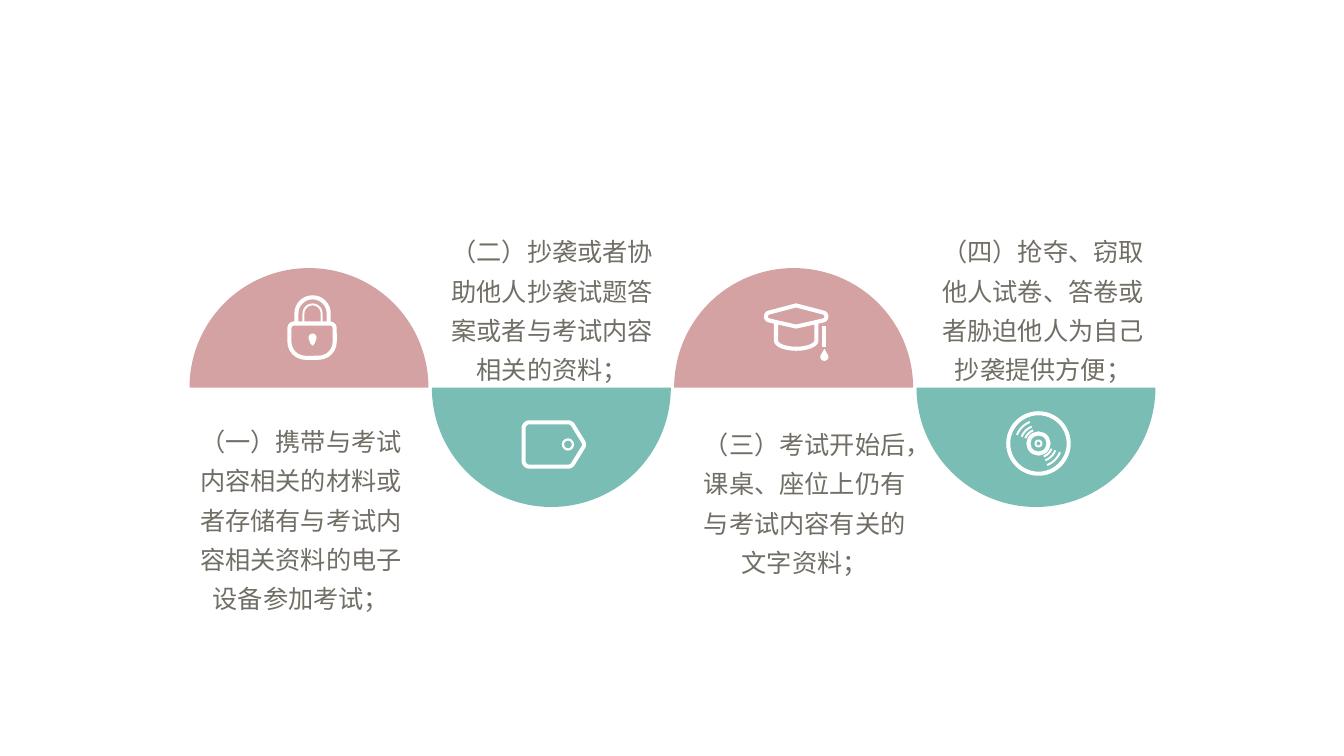
from math import cos, radians, sin

from lxml import etree
from pptx import Presentation
from pptx.dml.color import RGBColor
from pptx.enum.shapes import MSO_CONNECTOR, MSO_SHAPE
from pptx.enum.text import MSO_AUTO_SIZE, PP_ALIGN
from pptx.oxml.ns import qn
from pptx.util import Inches, Pt

ARC, OVAL = MSO_SHAPE.ARC, MSO_SHAPE.OVAL
ROUND_BODY = MSO_SHAPE.ROUND_2_SAME_RECTANGLE
STRAIGHT = MSO_CONNECTOR.STRAIGHT
CENTER, FIT_TEXT = PP_ALIGN.CENTER, MSO_AUTO_SIZE.SHAPE_TO_FIT_TEXT

PINK = RGBColor(0xD5, 0xA2, 0xA4)
TEAL = RGBColor(0x79, 0xBD, 0xB4)
GREY = RGBColor(0x70, 0x6E, 0x65)
WHITE = RGBColor(0xFF, 0xFF, 0xFF)
FONT = "Noto Sans CJK SC"
HALF_TURN = 108  # 180 degrees in the arc's adjustment units
THICK, THIN = 2.9, 1.4
DIAMETER = 2.37
ROW_LEFT, ROW_TOP, PITCH = 1.88, 2.66, 7.21 / 3


def paint(sp, fill=None, line=None):
    """Fill with a colour, or outline in white with a width in points."""
    sp.shadow.inherit = False
    if fill is None:
        sp.fill.background()
    else:
        sp.fill.solid()
        sp.fill.fore_color.rgb = fill
    if line is None:
        sp.line.fill.background()
    else:
        sp.line.color.rgb = WHITE
        sp.line.width = Pt(line)


def add_preset(s, kind, x, y, w, h, fill=None, line=None):
    sp = s.shapes.add_shape(kind, Inches(x), Inches(y), Inches(w), Inches(h))
    paint(sp, fill, line)
    return sp


def add_circle(s, cx, cy, r, line):
    add_preset(s, OVAL, cx - r, cy - r, 2 * r, 2 * r, line=line)


def add_path(s, x, y, points, closed=False, fill=None, line=None):
    """Draw points given in inches from the corner (x, y)."""
    pts = [(Inches(x + px), Inches(y + py)) for px, py in points]
    builder = s.shapes.build_freeform(*pts[0], scale=1)
    builder.add_line_segments(pts[1:], close=closed)
    paint(builder.convert_to_shape(), fill, line)


def curve(cx, cy, rx, ry, start, end, steps=16):
    """Points on an ellipse; angles in degrees, clockwise from the right."""
    angles = [radians(start + (end - start) * i / steps) for i in range(steps + 1)]
    return [(cx + rx * cos(a), cy + ry * sin(a)) for a in angles]


def draw_lock(s, x, y):
    body = add_preset(s, ROUND_BODY, x + 0.02, y + 0.28, 0.45, 0.34, line=THICK)
    body.adjustments[0], body.adjustments[1] = 0.13, 0.47
    for r, width in ((0.16, THICK), (0.09, THIN)):
        arch = curve(0.25, 0.18, r, r, 180, 360)
        add_path(s, x, y, [(0.25 - r, 0.28), *arch, (0.25 + r, 0.28)], line=width)
    keyhole = curve(0.25, 0.42, 0.04, 0.04, 170, 370)
    add_path(s, x, y, [*keyhole, (0.27, 0.48), (0.25, 0.5), (0.23, 0.48)],
             closed=True, fill=WHITE)


def draw_tag(s, x, y):
    corners = ((0.08, 0.08, 0.06, 180, 270), (0.46, 0.08, 0.06, 270, 328),
               (0.57, 0.24, 0.05, -32, 32), (0.46, 0.4, 0.06, 32, 90),
               (0.08, 0.4, 0.06, 90, 180))
    outline = [p for cx, cy, r, start, end in corners
               for p in curve(cx, cy, r, r, start, end)]
    add_path(s, x, y, outline, closed=True, line=THICK)
    add_circle(s, x + 0.46, y + 0.24, 0.05, 1.6)


def draw_cap(s, x, y):
    board = [(0.32, 0.02), *curve(0.58, 0.13, 0.04, 0.04, -77, 77),
             (0.32, 0.23), *curve(0.06, 0.13, 0.04, 0.04, 103, 257)]
    add_path(s, x, y, board, closed=True, line=THICK)
    cup = [(0.12, 0.18), *curve(0.32, 0.37, 0.2, 0.08, 180, 0), (0.52, 0.18)]
    add_path(s, x, y, cup, line=THICK)
    cord = s.shapes.add_connector(STRAIGHT, Inches(x + 0.6), Inches(y + 0.22),
                                  Inches(x + 0.6), Inches(y + 0.43))
    cord.line.color.rgb = WHITE
    cord.line.width = Pt(THICK)
    etree.SubElement(cord._element.spPr, qn("a:effectLst"))
    drop = [(0.6, 0.45), *curve(0.6, 0.53, 0.04, 0.04, -20, 200)]
    add_path(s, x, y, drop, closed=True, fill=WHITE)


def draw_disc(s, x, y):
    mid = 0.32
    for r, width in ((0.3, THICK), (0.1, THICK), (0.03, THIN)):
        add_circle(s, x + mid, y + mid, r, width)
    for r in (0.14, 0.18, 0.23):
        for start in (22, 202):
            add_path(s, x, y, curve(mid, mid, r, r, start, start + 46), line=THIN)


def add_caption(s, x, y, w, h, text):
    box = s.shapes.add_textbox(Inches(x), Inches(y), Inches(w), Inches(h))
    tf = box.text_frame
    tf.word_wrap = True
    tf.auto_size = FIT_TEXT
    p = tf.paragraphs[0]
    p.alignment, p.line_spacing = CENTER, 1.3
    r = p.add_run()
    r.text = text
    for name, value in {"size": Pt(18), "name": FONT}.items():
        setattr(r.font, name, value)
    r.font.color.rgb = GREY
    etree.SubElement(r._r.get_or_add_rPr(), qn("a:ea")).set("typeface", FONT)


def add_step(s, x, y, upper, caption_box, text, draw_icon, icon_at):
    """Half disc with icon and caption; offsets count from (x, y)."""
    half = add_preset(s, ARC, x, y, DIAMETER, DIAMETER, fill=PINK if upper else TEAL)
    half.adjustments[0] = HALF_TURN if upper else 0
    half.adjustments[1] = 0 if upper else HALF_TURN
    dx, dy, w, h = caption_box
    add_caption(s, x + dx, y + dy, w, h, text)
    draw_icon(s, x + icon_at[0], y + icon_at[1])


STEPS = [
    ((-0.01, 1.43, 2.23, 2.07),
     "（一）携带与考试内容相关的材料或者存储有与考试内容相关资料的电子设备参加考试；",
     draw_lock, (0.97, 0.27)),
    ((0.07, -0.45, 2.25, 1.68),
     "（二）抄袭或者协助他人抄袭试题答案或者与考试内容相关的资料；",
     draw_tag, (0.89, 1.51)),
    ((0.17, 1.46, 2.25, 1.68),
     "（三）考试开始后，课桌、座位上仍有与考试内容有关的文字资料；",
     draw_cap, (0.89, 0.35)),
    ((0.11, -0.45, 2.29, 1.68),
     "（四）抢夺、窃取他人试卷、答卷或者胁迫他人为自己抄袭提供方便；",
     draw_disc, (0.89, 1.42)),
]


def main():
    prs = Presentation()
    prs.slide_width, prs.slide_height = Inches(13.33), Inches(7.5)
    s = prs.slides.add_slide(prs.slide_layouts[6])
    # Right to left, so each caption lies above the half disc to its right.
    for i, step in reversed(list(enumerate(STEPS))):
        add_step(s, ROW_LEFT + i * PITCH, ROW_TOP, i % 2 == 0, *step)
    prs.save("out.pptx")


if __name__ == "__main__":
    main()
